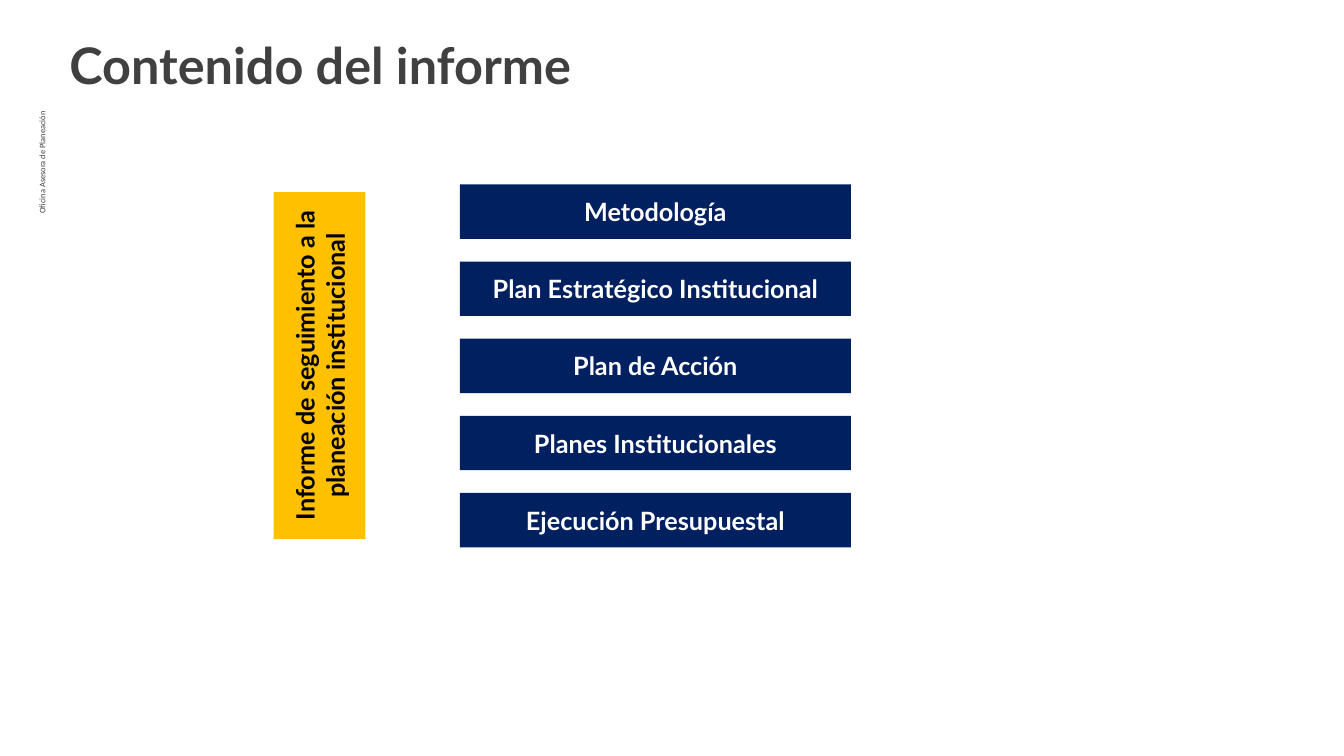
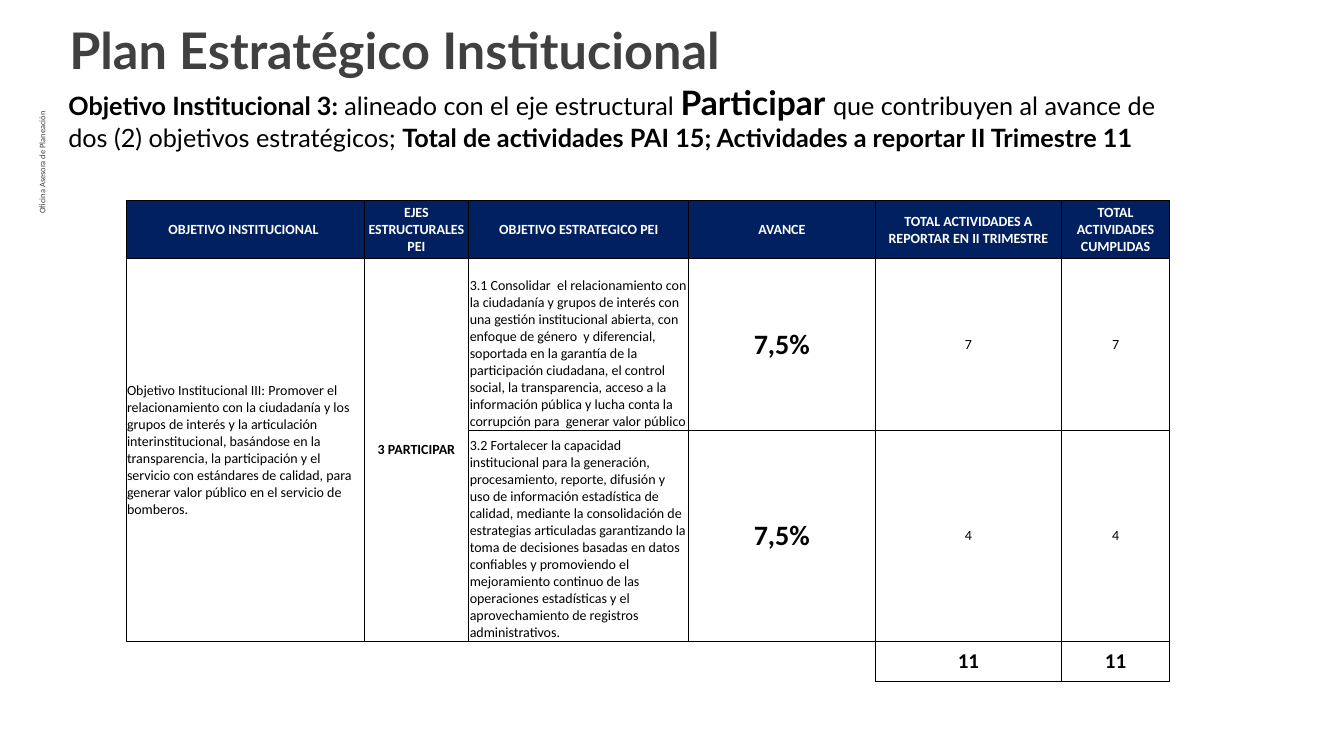
from lxml import etree
from pptx import Presentation
from pptx.dml.color import RGBColor
from pptx.enum import shapes, text
from pptx.oxml.ns import qn
from pptx.util import Inches, Pt

COLORS = {"navy": "002060", "gold": "FFC000", "gray": "404040",
          "black": "000000", "white": "FFFFFF"}
LEFT, CENTER, RIGHT = text.PP_ALIGN.LEFT, text.PP_ALIGN.CENTER, text.PP_ALIGN.RIGHT
TOP, MIDDLE, BOTTOM = text.MSO_ANCHOR.TOP, text.MSO_ANCHOR.MIDDLE, text.MSO_ANCHOR.BOTTOM

# Content
OFFICE = "Oficina Asesora de Planeación"
CONTENTS_TITLE = "Contenido del informe"
REPORT = "Informe de seguimiento a la planeación institucional"
SECTIONS = ["Metodología", "Plan Estratégico Institucional", "Plan de Acción",
            "Planes Institucionales", "Ejecución Presupuestal"]

PLAN_TITLE = "Plan Estratégico Institucional"
SUMMARY = [
    ("Objetivo Institucional 3: ", {"bold": True}),
    ("alineado con el eje estructural ", {}),
    ("Participar ", {"bold": True, "size": 24}),
    ("que contribuyen al avance de dos (2) objetivos estratégicos; ", {}),
    ("Total de actividades PAI 15; Actividades a reportar II Trimestre 11", {"bold": True}),
]
HEADERS = ["OBJETIVO INSTITUCIONAL ", "EJES ESTRUCTURALES PEI", "OBJETIVO ESTRATEGICO PEI",
           "AVANCE", "TOTAL ACTIVIDADES A REPORTAR EN II TRIMESTRE",
           "TOTAL ACTIVIDADES CUMPLIDAS"]
GOAL = ("Objetivo Institucional III: Promover el relacionamiento con la ciudadanía y los grupos "
        "de interés y la articulación interinstitucional, basándose en la transparencia, la "
        "participación y el servicio con estándares de calidad, para generar valor público en "
        "el servicio de bomberos.")
STRATEGIES = [
    ("3.1 Consolidar  el relacionamiento con la ciudadanía y grupos de interés con una gestión "
     "institucional abierta, con enfoque de género  y diferencial, soportada en la garantía de "
     "la participación ciudadana, el control social, la transparencia, acceso a la información "
     "pública y lucha conta la corrupción para  generar valor público"),
    ("3.2 Fortalecer la capacidad institucional para la generación, procesamiento, reporte, "
     "difusión y uso de información estadística de calidad, mediante la consolidación de "
     "estrategias articuladas garantizando la toma de decisiones basadas en datos confiables y "
     "promoviendo el mejoramiento continuo de las operaciones estadísticas y el "
     "aprovechamiento de registros administrativos."),
]
ROWS = [
    HEADERS,
    [GOAL, "3 PARTICIPAR", STRATEGIES[0], "7,5%", "7", "7"],
    ["", "", STRATEGIES[1], "7,5%", "4", "4"],
    ["", "", "", "", "11", "11"],
]
COLUMN_WIDTHS = [2.36, 1.04, 2.18, 1.85, 1.85, 1.07]
ROW_HEIGHTS = [0.57, 1.71, 2.09, 0.4]

# Formats of the table body, by column
LONG_TEXT = {"align": LEFT}
PERCENT = {"size": 20, "bold": True}
BODY_FORMATS = [LONG_TEXT, {"bold": True}, {"align": LEFT, "anchor": BOTTOM}, PERCENT, {}, {}]
HEADER_FORMAT = {"color": "white", "bold": True}
TOTAL_FORMAT = {"size": 15, "bold": True}


def rgb(name):
    return RGBColor.from_string(COLORS[name])


def write(frame, content, size=18, font="Lato", color="black", bold=False,
          align=LEFT, anchor=TOP):
    """Fill a text frame with a string or with (text, overrides) runs."""
    frame.word_wrap = True
    frame.vertical_anchor = anchor
    paragraph = frame.paragraphs[0]
    paragraph.alignment = align
    for words, changes in [(content, {})] if isinstance(content, str) else content:
        run = paragraph.add_run()
        run.text = words
        run.font.name = font
        run.font.size = Pt(changes.get("size", size))
        run.font.bold = changes.get("bold", bold)
        run.font.color.rgb = rgb(color)


def add_text(slide, box, content, **style):
    label = slide.shapes.add_textbox(*map(Inches, box))
    write(label.text_frame, content, **style)
    return label


def add_block(slide, box, content, fill, **style):
    block = slide.shapes.add_shape(shapes.MSO_SHAPE.RECTANGLE, *map(Inches, box))
    block.shadow.inherit = False
    block.fill.solid()
    block.fill.fore_color.rgb = rgb(fill)
    block.line.fill.background()
    write(block.text_frame, content, bold=True, align=CENTER, anchor=MIDDLE, **style)
    return block


def start_slide(deck, title, top):
    """Blank slide with the shared title style and the side label."""
    slide = deck.slides.add_slide(deck.slide_layouts[6])
    add_text(slide, (0.59, top, 10.66, 0.71), title, size=36, color="gray", bold=True)
    office = add_text(slide, (-0.88, 2.24, 2.59, 0.18), OFFICE, size=6, font="Calibri",
                      color="gray", align=RIGHT)
    office.rotation = 270
    frame = office.text_frame
    frame.margin_left = frame.margin_right = Inches(0.07)
    frame.margin_top = frame.margin_bottom = Inches(0.04)
    return slide


def set_borders(cell, visible):
    properties = cell._tc.get_or_add_tcPr()
    for side in "LRTB":
        line = etree.SubElement(properties, qn(f"a:ln{side}"), w=str(Pt(0.5)))
        if side in visible:
            fill = etree.SubElement(line, qn("a:solidFill"))
            etree.SubElement(fill, qn("a:srgbClr"), val=COLORS["black"])
        else:
            etree.SubElement(line, qn("a:noFill"))


def build_contents(deck):
    slide = start_slide(deck, CONTENTS_TITLE, 0.29)
    report = add_block(slide, (1.45, 3.17, 3.44, 0.91), REPORT, "gold")
    report.rotation = 270
    first, last = 1.83, 4.89
    pitch = (last - first) / (len(SECTIONS) - 1)
    for index, section in enumerate(SECTIONS):
        add_block(slide, (4.56, first + index * pitch, 3.88, 0.54), section, "navy",
                  color="white")


def build_plan(deck):
    slide = start_slide(deck, PLAN_TITLE, 0.14)
    add_text(slide, (0.58, 0.76, 11.43, 0.81), SUMMARY)

    # Progress table
    progress = slide.shapes.add_table(
        len(ROWS), len(HEADERS), Inches(1.25), Inches(1.99),
        Inches(sum(COLUMN_WIDTHS)), Inches(sum(ROW_HEIGHTS))).table
    for column, width in zip(progress.columns, COLUMN_WIDTHS):
        column.width = Inches(width)
    for row, height in zip(progress.rows, ROW_HEIGHTS):
        row.height = Inches(height)

    total_row = len(ROWS) - 1
    for r, row in enumerate(ROWS):
        for c, content in enumerate(row):
            cell = progress.cell(r, c)
            blank_total = r == total_row and not content
            set_borders(cell, ("TR" if c == 3 else "T") if blank_total else "LRTB")
            cell.fill.solid()
            cell.fill.fore_color.rgb = rgb("white" if r else "navy")
            cell.margin_left = cell.margin_right = cell.margin_top = Inches(0.01)
            cell.margin_bottom = 0
            style = {0: HEADER_FORMAT, total_row: TOTAL_FORMAT}.get(r, BODY_FORMATS[c])
            style = {"size": 10, "font": "Calibri", "align": CENTER, "anchor": MIDDLE, **style}
            cell.vertical_anchor = style.pop("anchor")
            if content:
                write(cell.text_frame, content, anchor=None, **style)
    for c in (0, 1):
        progress.cell(1, c).merge(progress.cell(2, c))


def main():
    deck = Presentation()
    deck.slide_width, deck.slide_height = Inches(13.33), Inches(7.5)
    build_contents(deck)
    build_plan(deck)
    deck.save("out.pptx")


if __name__ == "__main__":
    main()
